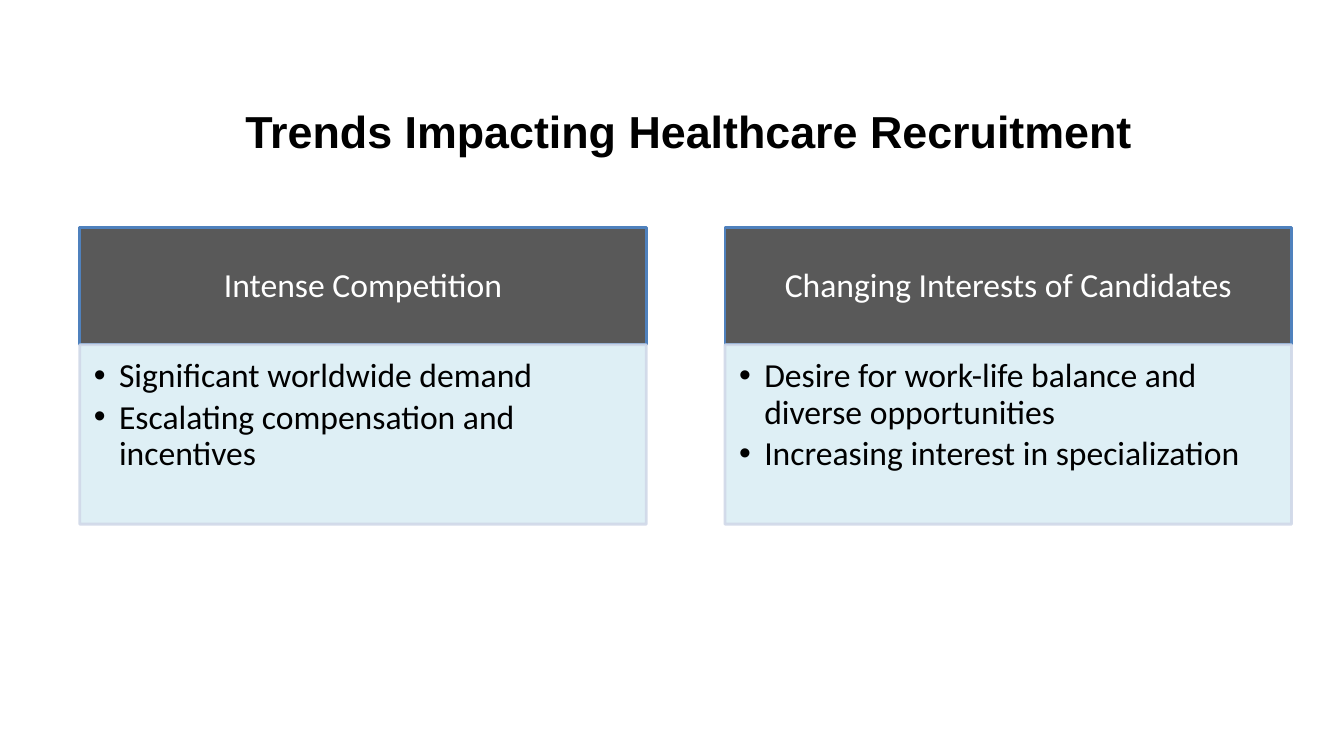
from lxml.etree import SubElement
from pptx import Presentation
from pptx.dml.color import RGBColor
from pptx.enum.shapes import MSO_SHAPE
from pptx.enum.text import MSO_ANCHOR, PP_ALIGN
from pptx.oxml.ns import qn
from pptx.util import Inches, Pt

TITLE = "Trends Impacting Healthcare Recruitment"
TRENDS = [
    ("Intense Competition",
     ["Significant worldwide demand",
      "Escalating compensation and incentives"]),
    ("Changing Interests of Candidates",
     ["Desire for work-life balance and diverse opportunities",
      "Increasing interest in specialization"]),
]
THEME = {
    "title": {"name": "Arial", "size": Pt(32), "bold": True, "color": "000000"},
    "head": {"name": "Calibri", "size": Pt(24), "color": "FFFFFF"},
    "body": {"name": "Calibri", "size": Pt(24), "color": "000000"},
    "head_box": {"fill": "595959", "line": "4F81BD", "alpha": 100},
    "body_box": {"fill": "DBEEF4", "line": "D0D8E8", "alpha": 90},
}
LEFT, TOP, WIDTH, STEP = 0.79, 2.26, 5.62, 6.4
HEAD, BODY = 1.16, 1.78


def style(item, values):
    for key, value in values.items():
        if key == "color":
            item.color.rgb = RGBColor.from_string(value)
        else:
            setattr(item, key, value)


def frame(shape, insets, anchor):
    text = shape.text_frame
    sides = ("left", "top", "right", "bottom")
    margins = {f"margin_{s}": Inches(n) for s, n in zip(sides, insets)}
    style(text, {"word_wrap": True, "vertical_anchor": anchor, **margins})
    return text


def write(text, lines, font, layout, bullet=False):
    for i, line in enumerate(lines):
        para = text.add_paragraph() if i else text.paragraphs[0]
        para.text = line
        style(para, layout)
        if bullet:
            props = para._p.get_or_add_pPr()
            props.set("marL", str(Inches(0.25)))
            props.set("indent", str(-Inches(0.25)))
            SubElement(props, qn("a:buFont"), typeface="Arial")
            SubElement(props, qn("a:buChar"), char="•")
        style(para.runs[0].font, THEME[font])


def box(slide, place, look):
    shape = slide.shapes.add_shape(MSO_SHAPE.RECTANGLE, *map(Inches, place))
    shape.shadow.inherit = False
    shape.fill.solid()
    shape.fill.fore_color.rgb = RGBColor.from_string(look["fill"])
    shape.line.color.rgb = RGBColor.from_string(look["line"])
    shape.line.width = Pt(2)
    if look["alpha"] < 100:
        for color in shape._element.spPr.iter(qn("a:srgbClr")):
            SubElement(color, qn("a:alpha"), val=str(look["alpha"] * 1000))
    return shape


def main():
    deck = Presentation()
    deck.slide_width, deck.slide_height = Inches(13.33), Inches(7.5)
    slide = deck.slides.add_slide(deck.slide_layouts[6])

    for i, (head, points) in enumerate(TRENDS):
        left = LEFT + i * STEP
        top = box(slide, (left, TOP, WIDTH, HEAD), THEME["head_box"])
        write(frame(top, (0.19, 0.11, 0.19, 0.11), MSO_ANCHOR.MIDDLE), [head], "head",
              {"alignment": PP_ALIGN.CENTER, "line_spacing": 0.9})
        low = box(slide, (left, TOP + HEAD, WIDTH, BODY), THEME["body_box"])
        write(frame(low, (0.14, 0.14, 0.19, 0.21), MSO_ANCHOR.TOP), points, "body",
              {"alignment": PP_ALIGN.LEFT, "line_spacing": 0.9, "space_after": Pt(3.6)},
              bullet=True)

    title = slide.shapes.add_textbox(*map(Inches, (1.25, 0.92, 11.17, 0.59)))
    write(frame(title, (0, 0, 0, 0), MSO_ANCHOR.TOP), [TITLE], "title",
          {"alignment": PP_ALIGN.CENTER, "line_spacing": 1.2})
    deck.save("out.pptx")


if __name__ == "__main__":
    main()
